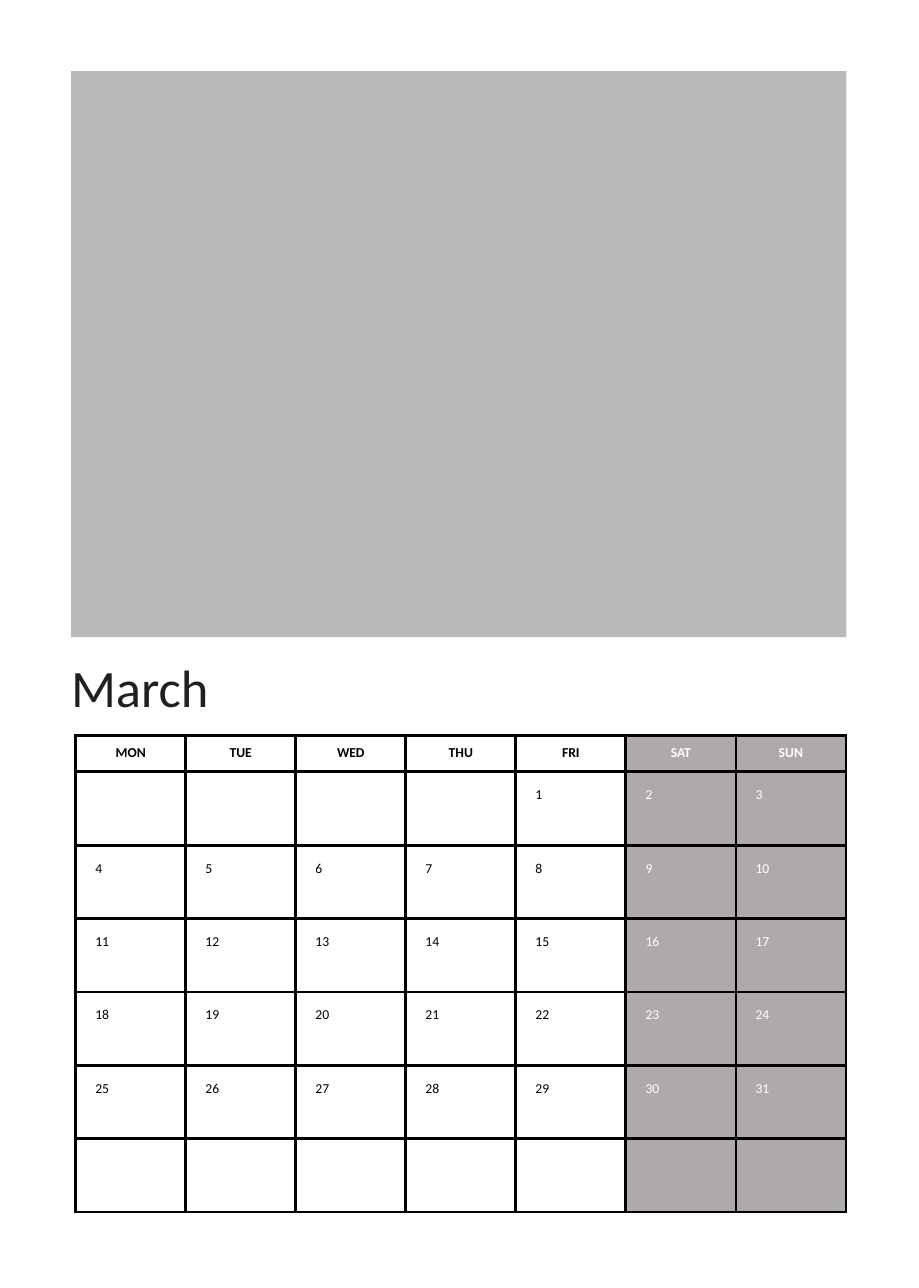
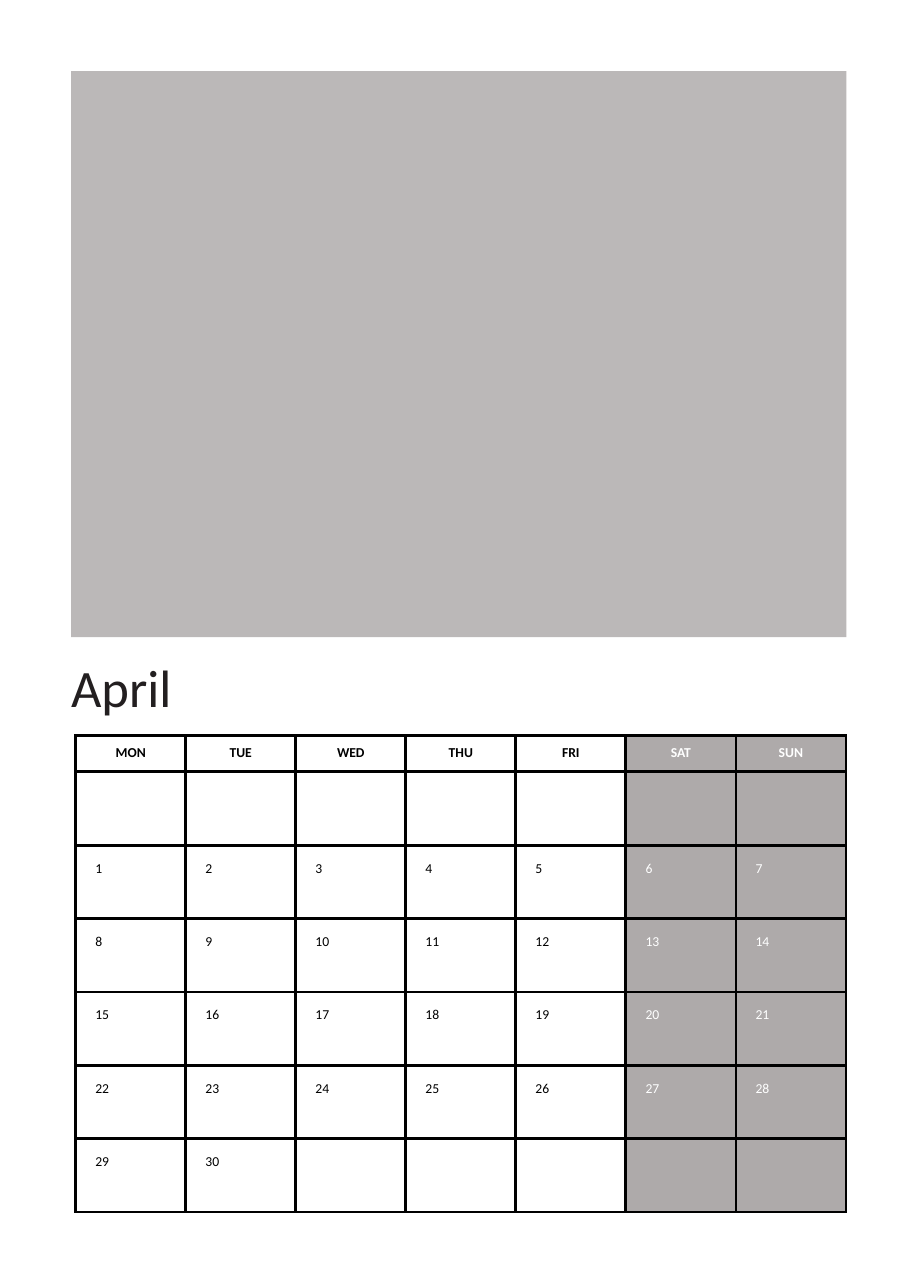
from lxml import etree
from pptx import Presentation
from pptx.dml.color import RGBColor
from pptx.enum import shapes, text
from pptx.oxml import ns
from pptx.util import Inches, Pt

# Shared look
FONT = "Calibri"
INK = RGBColor(0x23, 0x1F, 0x20)
BLACK = RGBColor(0, 0, 0)
WHITE = RGBColor(0xFF, 0xFF, 0xFF)
PHOTO_GREY = RGBColor(0xBB, 0xB8, 0xB8)
WEEKEND_GREY = RGBColor(0xAE, 0xAA, 0xAA)

# Calendar grid
WEEKDAYS = ["MON", "TUE", "WED", "THU", "FRI", "SAT", "SUN"]
FIRST_WEEKEND_COLUMN = 5
WEEKS = 6
GRID_LEFT, GRID_TOP, GRID_WIDTH = 0.5, 4.86, 5.09
HEADER_HEIGHT, WEEK_HEIGHT = 0.24, 0.485
BORDER_WIDTH = Pt(1.5)

# Month name, cell of day 1 (counted from the first Monday cell), number of days
MONTHS = [("March", 4, 31), ("April", 7, 30)]


def write(frame, words, size, color, bold=False, align=text.PP_ALIGN.LEFT):
    """Put one formatted line into a text frame."""
    line = frame.paragraphs[0]
    line.alignment = align
    run = line.add_run()
    run.text = words
    run.font.name = FONT
    run.font.size = Pt(size)
    run.font.bold = bold
    run.font.color.rgb = color


def set_margins(holder, left=0, top=0):
    holder.margin_left, holder.margin_top = Inches(left), Inches(top)
    holder.margin_right = holder.margin_bottom = 0


def add_borders(cell):
    """Draw a solid line on all four sides; lines come before the fill."""
    properties = cell._tc.get_or_add_tcPr()
    for index, side in enumerate(("lnL", "lnR", "lnT", "lnB")):
        line = etree.Element(ns.qn(f"a:{side}"), w=str(BORDER_WIDTH))
        fill = etree.SubElement(line, ns.qn("a:solidFill"))
        etree.SubElement(fill, ns.qn("a:srgbClr"), val=str(BLACK))
        properties.insert(index, line)


def add_photo_area(slide):
    photo_area = slide.shapes.add_shape(
        shapes.MSO_SHAPE.RECTANGLE,
        Inches(0.47), Inches(0.47), Inches(5.12), Inches(3.74))
    photo_area.shadow.inherit = False
    photo_area.fill.solid()
    photo_area.fill.fore_color.rgb = PHOTO_GREY
    photo_area.line.fill.background()


def add_month_name(slide, month):
    name_box = slide.shapes.add_textbox(
        Inches(0.47), Inches(4.31), Inches(2), Inches(0.44))
    frame = name_box.text_frame
    frame.word_wrap = True
    set_margins(frame, top=0.02)
    write(frame, month, 25, INK)


def style_cell(cell, weekend):
    if weekend:
        cell.fill.solid()
        cell.fill.fore_color.rgb = WEEKEND_GREY
    else:
        cell.fill.background()
    add_borders(cell)


def add_calendar(slide, first_cell, day_count):
    calendar = slide.shapes.add_table(
        WEEKS + 1, len(WEEKDAYS), Inches(GRID_LEFT), Inches(GRID_TOP),
        Inches(GRID_WIDTH), Inches(HEADER_HEIGHT + WEEKS * WEEK_HEIGHT)).table
    calendar.first_row = calendar.horz_banding = False
    for column in calendar.columns:
        column.width = Inches(GRID_WIDTH / len(WEEKDAYS))
    for index, row in enumerate(calendar.rows):
        row.height = Inches(WEEK_HEIGHT if index else HEADER_HEIGHT)

    for column, weekday in enumerate(WEEKDAYS):
        weekend = column >= FIRST_WEEKEND_COLUMN
        color = WHITE if weekend else BLACK
        # Weekday heading
        heading = calendar.cell(0, column)
        style_cell(heading, weekend)
        set_margins(heading, top=0.06)
        write(heading.text_frame, weekday, 6.5, color, bold=True,
              align=text.PP_ALIGN.CENTER)
        # Days below it
        for week in range(WEEKS):
            day_cell = calendar.cell(week + 1, column)
            style_cell(day_cell, weekend)
            set_margins(day_cell, left=0.13, top=0.1)
            day = week * len(WEEKDAYS) + column - first_cell + 1
            if 1 <= day <= day_count:
                write(day_cell.text_frame, str(day), 6.5, color)


def main():
    deck = Presentation()
    deck.slide_width, deck.slide_height = Inches(6.07), Inches(8.51)
    for month, first_cell, day_count in MONTHS:
        slide = deck.slides.add_slide(deck.slide_layouts[6])
        add_month_name(slide, month)
        add_photo_area(slide)
        add_calendar(slide, first_cell, day_count)
    deck.save("out.pptx")


if __name__ == "__main__":
    main()
